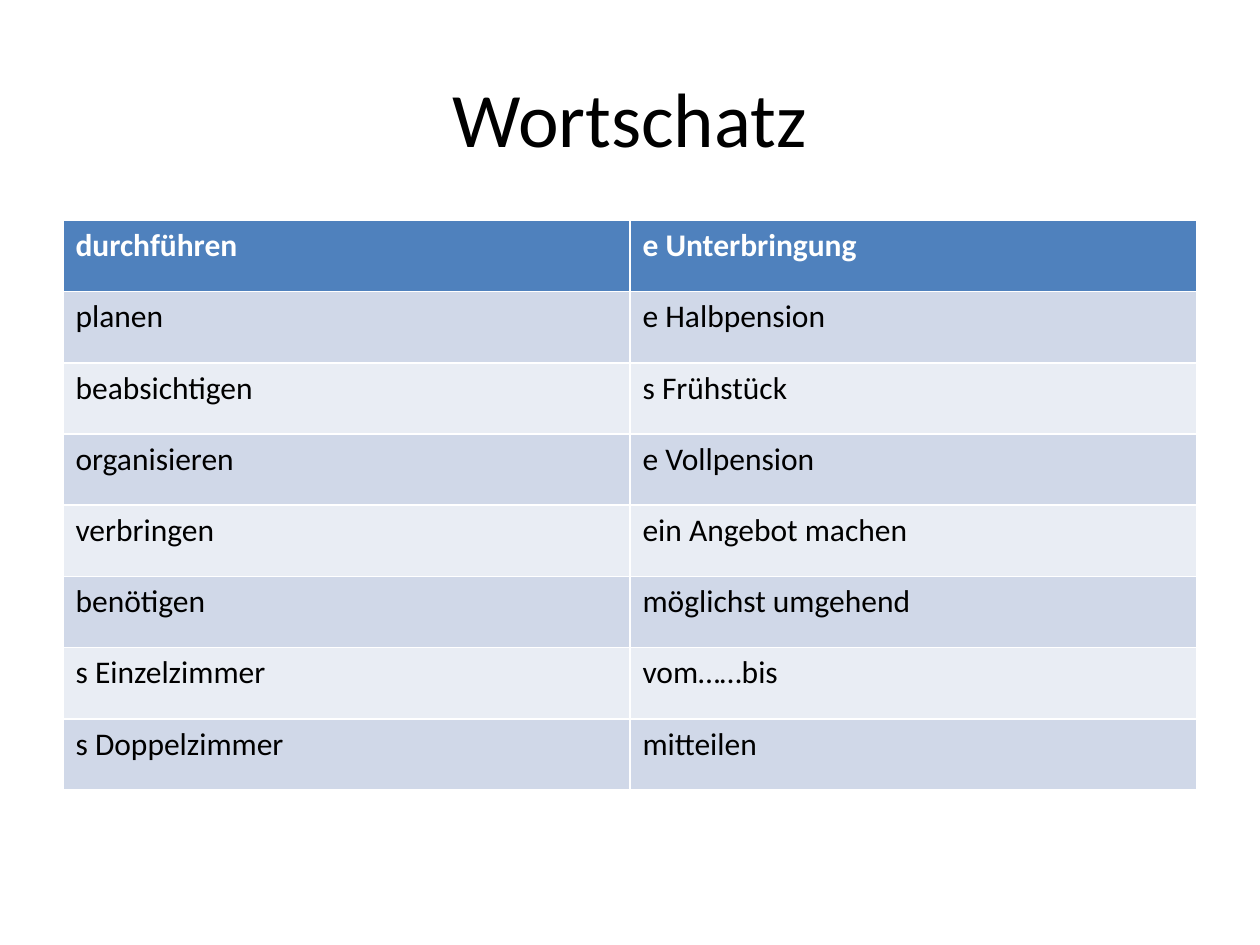
"""Build the Wortschatz slide: a title above a two-column vocabulary table."""
from pptx import Presentation
from pptx.dml.color import RGBColor
from pptx.enum.text import MSO_ANCHOR, PP_ALIGN
from pptx.util import Inches, Pt

TITLE = "Wortschatz"
VOCABULARY = [
    ("durchführen", "e Unterbringung"),
    ("planen", "e Halbpension"),
    ("beabsichtigen", "s Frühstück"),
    ("organisieren", "e Vollpension"),
    ("verbringen", "ein Angebot machen"),
    ("benötigen", "möglichst umgehend"),
    ("s Einzelzimmer", "vom……bis"),
    ("s Doppelzimmer", "mitteilen"),
]

FONT = "Calibri"
BLACK = RGBColor(0x00, 0x00, 0x00)
WHITE = RGBColor(0xFF, 0xFF, 0xFF)
HEADER_BLUE = RGBColor(0x4F, 0x81, 0xBD)
BANDS = [RGBColor(0xD0, 0xD8, 0xE8), RGBColor(0xE9, 0xED, 0xF4)]

LEFT, WIDTH = Inches(0.5), Inches(9)
TABLE_TOP, TABLE_HEIGHT = Inches(1.75), Inches(4.52)


def add_run(paragraph, text, size, color, bold=False):
    run = paragraph.add_run()
    run.text = text
    run.font.name = FONT
    run.font.size = Pt(size)
    run.font.bold = bold
    run.font.color.rgb = color


def add_title(slide):
    title = slide.shapes.title
    title.left, title.top = LEFT, Inches(0.3)
    title.width, title.height = WIDTH, Inches(1.25)
    title.text_frame.vertical_anchor = MSO_ANCHOR.MIDDLE
    heading = title.text_frame.paragraphs[0]
    heading.alignment = PP_ALIGN.CENTER
    add_run(heading, TITLE, 44, BLACK)


def add_vocabulary(slide):
    table = slide.shapes.add_table(
        len(VOCABULARY), len(VOCABULARY[0]), LEFT, TABLE_TOP, WIDTH, TABLE_HEIGHT
    ).table
    for row, words in enumerate(VOCABULARY):
        is_header = row == 0
        for column, word in enumerate(words):
            cell = table.cell(row, column)
            cell.fill.solid()
            cell.fill.fore_color.rgb = HEADER_BLUE if is_header else BANDS[(row - 1) % 2]
            add_run(cell.text_frame.paragraphs[0], word, 18,
                    WHITE if is_header else BLACK, is_header)


def main():
    presentation = Presentation()
    presentation.slide_width, presentation.slide_height = Inches(10), Inches(7.5)
    slide = presentation.slides.add_slide(presentation.slide_layouts.get_by_name("Title Only"))
    add_title(slide)
    add_vocabulary(slide)
    presentation.save("out.pptx")


if __name__ == "__main__":
    main()
